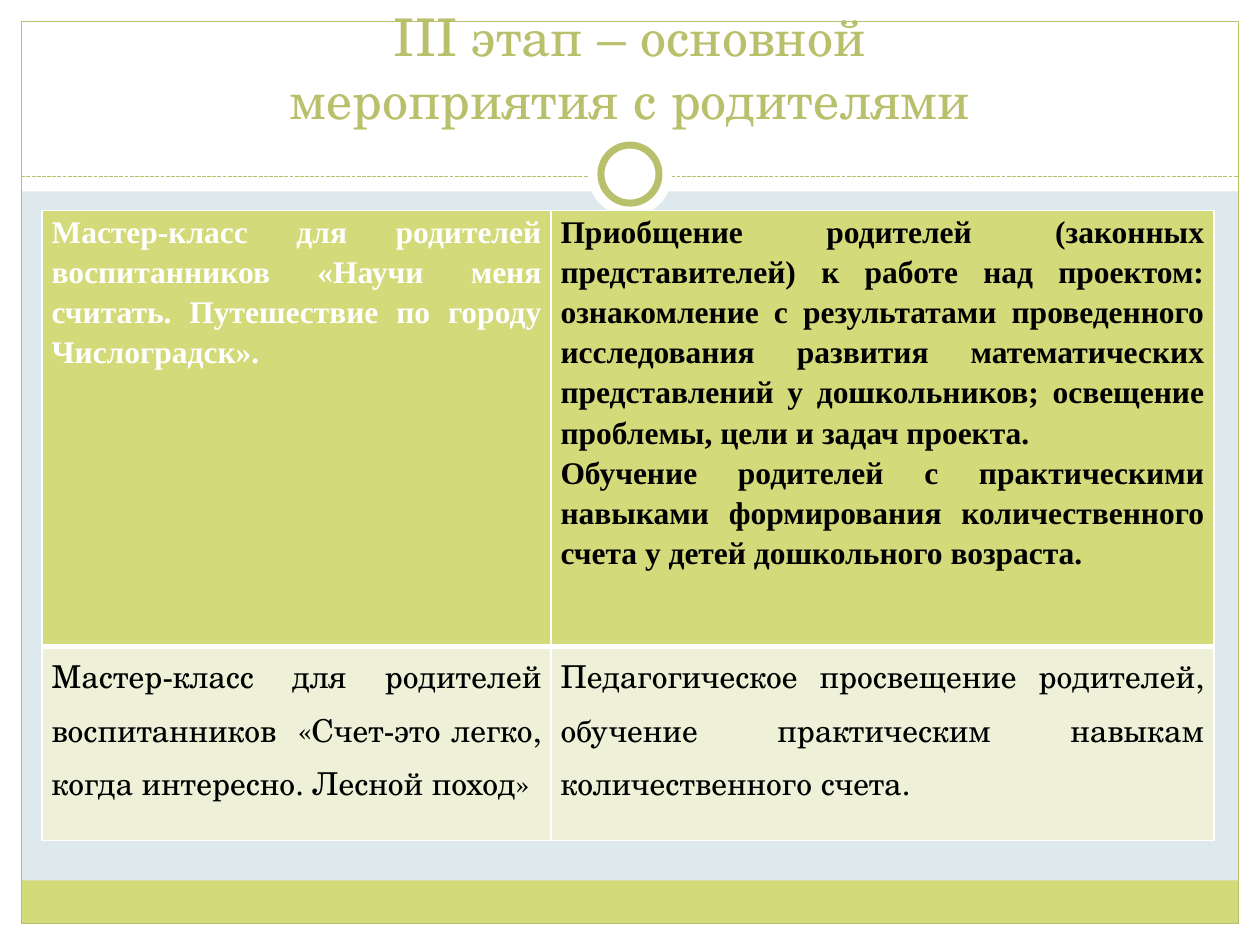
import pptx
import pptx.util
import pptx.dml.color
import pptx.enum.dml
import pptx.enum.shapes
import pptx.enum.text
import pptx.oxml
import pptx.oxml.ns
from dataclasses import dataclass
from lxml import etree
from pptx.util import Cm, Pt


@dataclass(frozen=True)
class Theme:
    background: str = "DDE9EC"
    white: str = "FFFFFF"
    black: str = "000000"
    olive: str = "B9C06C"
    lime: str = "D2DA7A"
    pale: str = "EEF1D7"
    heading_font: str = "TeX Gyre Schola"
    body_font: str = "Times New Roman"
    title_size: float = 29.7
    body_size: float = 18


theme = Theme()
rgb = pptx.dml.color.RGBColor.from_string
Shape = pptx.enum.shapes.MSO_SHAPE
Align = pptx.enum.text.PP_ALIGN

deck = pptx.Presentation()
deck.slide_width, deck.slide_height = Cm(25.4), Cm(19.05)
slide = deck.slides.add_slide(deck.slide_layouts[6])
slide.background.fill.solid()
slide.background.fill.fore_color.rgb = rgb(theme.background)


def style_text(paragraph, font_format, paragraph_format):
    for name, value in paragraph_format.items():
        setattr(paragraph, name, value)
    for run in paragraph.runs:
        for name, value in font_format.items():
            if name == "color":
                run.font.color.rgb = rgb(value)
            else:
                setattr(run.font, name, value)


def set_borders(cell, widths):
    """Draw white cell borders; widths maps a side (L, R, T, B) to points."""
    properties = cell._tc.get_or_add_tcPr()
    for position, (side, points) in enumerate(widths.items()):
        border = pptx.oxml.parse_xml(
            f'<a:ln{side} {pptx.oxml.ns.nsdecls("a")} w="{Pt(points)}">'
            f'<a:solidFill><a:srgbClr val="{theme.white}"/></a:solidFill></a:ln{side}>'
        )
        properties.insert(position, border)


# Frame: white margins, bottom band, outline
margin = 0.43
frame_width, frame_height = 25.4 - 2 * margin, 19.05 - 2 * margin
frame_parts = [
    (0, 19.05 - margin, 25.4, margin, theme.white, None),
    (0, 0, 25.4, 3.86, theme.white, None),
    (0, 0, margin, 19.05, theme.white, None),
    (25.4 - margin, 0, margin, 19.05, theme.white, None),
    (margin, 17.75, frame_width, 0.87, theme.lime, None),
    (margin, margin, frame_width, frame_height, None, 0.75),
]

# Ring on the divider, centred on the slide
ring_middle = 3.51
ring_parts = [
    ((25.4 - size) / 2, ring_middle - size / 2, size, size, theme.white, line)
    for size, line in ((1.7, None), (1.17, 4))
]

divider = slide.shapes.add_connector(
    pptx.enum.shapes.MSO_CONNECTOR.STRAIGHT, Cm(margin), Cm(3.56), Cm(25.4 - margin), Cm(3.56)
)
divider.line.color.rgb = rgb(theme.olive)
divider.line.width = Pt(0.75)
divider.line.dash_style = pptx.enum.dml.MSO_LINE.SQUARE_DOT
etree.SubElement(divider._element.spPr, pptx.oxml.ns.qn("a:effectLst"))

for kind, parts in ((Shape.RECTANGLE, frame_parts), (Shape.OVAL, ring_parts)):
    if kind == Shape.OVAL:
        # The divider lies above the frame and below the ring
        slide.shapes._spTree.append(divider._element)
    for left, top, width, height, fill, line in parts:
        part = slide.shapes.add_shape(kind, Cm(left), Cm(top), Cm(width), Cm(height))
        part.shadow.inherit = False
        if fill:
            part.fill.solid()
            part.fill.fore_color.rgb = rgb(fill)
        else:
            part.fill.background()
        if line:
            part.line.color.rgb = rgb(theme.olive)
            part.line.width = Pt(line)
        else:
            part.line.fill.background()

# Title
title = slide.shapes.add_textbox(Cm(0.85), Cm(0.64), Cm(23.7), Cm(2.1)).text_frame
title.word_wrap = True
title.vertical_anchor = pptx.enum.text.MSO_ANCHOR.BOTTOM
title.text = "III этап – основной\vмероприятия с родителями"
style_text(
    title.paragraphs[0],
    {"name": theme.heading_font, "size": Pt(theme.title_size), "color": theme.olive},
    {"alignment": Align.CENTER},
)

# Events and their purpose
events = [
    [
        "Мастер-класс для родителей воспитанников «Научи меня считать. "
        "Путешествие по городу Числоградск».",
        "Приобщение родителей (законных представителей) к работе над проектом: "
        "ознакомление с результатами проведенного исследования развития математических "
        "представлений у дошкольников; освещение проблемы, цели и задач проекта.\n"
        "Обучение родителей с практическими навыками формирования количественного "
        "счета у детей дошкольного возраста. ",
    ],
    [
        "Мастер-класс для родителей воспитанников  «Счет-это легко, когда интересно. "
        "Лесной поход»",
        "Педагогическое просвещение родителей, обучение практическим навыкам "
        "количественного счета.",
    ],
]
row_styles = [
    (theme.lime, theme.body_font, True, (theme.white, theme.black), {"L": 1, "R": 1, "T": 1, "B": 3}),
    (theme.pale, theme.heading_font, False, (theme.black, theme.black), {"L": 1, "R": 1, "T": 3, "B": 1}),
]
cell_format = {
    "margin_left": Cm(0.19), "margin_right": Cm(0.19), "margin_top": 0, "margin_bottom": 0,
}
table = slide.shapes.add_table(2, 2, Cm(0.85), Cm(4.24), Cm(23.62), Cm(12.7)).table
for column, width in zip(table.columns, (10.26, 13.36)):
    column.width = Cm(width)
for row, height in zip(table.rows, (8.79, 3.91)):
    row.height = Cm(height)

for row, texts, (fill, font, bold, colors, borders) in zip(table.rows, events, row_styles):
    for cell, text, color in zip(row.cells, texts, colors):
        for name, value in cell_format.items():
            setattr(cell, name, value)
        cell.fill.solid()
        cell.fill.fore_color.rgb = rgb(fill)
        set_borders(cell, borders)
        cell.text = text
        for paragraph in cell.text_frame.paragraphs:
            style_text(
                paragraph,
                {"name": font, "size": Pt(theme.body_size), "bold": bold, "color": color},
                {"alignment": Align.JUSTIFY, "line_spacing": 1.15},
            )

deck.save("out.pptx")
